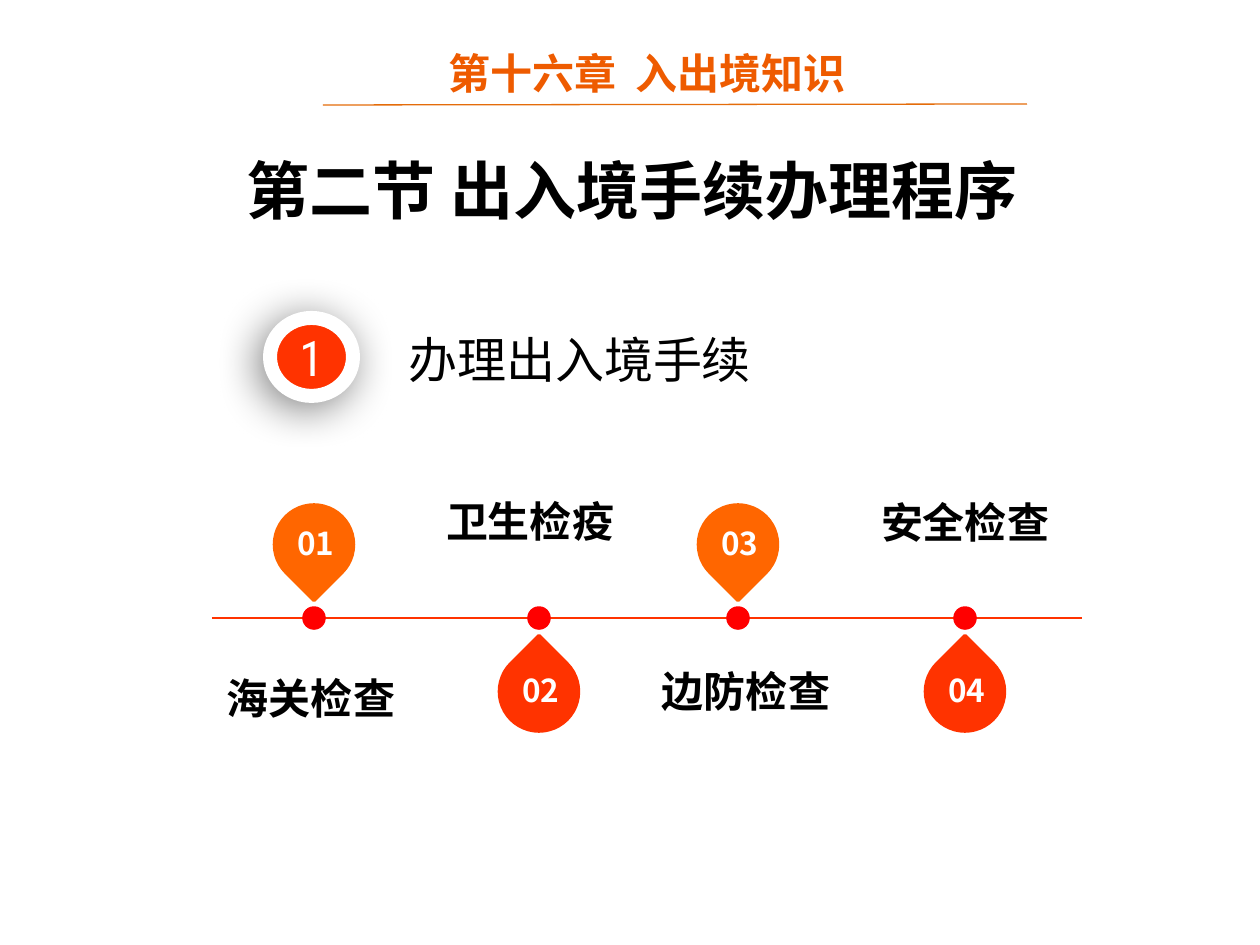
import pptx
import pptx.dml.color
import pptx.enum.shapes
import pptx.enum.text
import pptx.oxml
import pptx.oxml.ns
import pptx.util

RGB = pptx.dml.color.RGBColor
SHAPE = pptx.enum.shapes.MSO_SHAPE
ALIGN = pptx.enum.text.PP_ALIGN
ANCHOR = pptx.enum.text.MSO_ANCHOR

WHITE = RGB(0xFF, 0xFF, 0xFF)
BLACK = RGB(0x00, 0x00, 0x00)
CHAPTER_ORANGE = RGB(0xEE, 0x5B, 0x00)
RULE_ORANGE = RGB(0xE4, 0x6C, 0x0A)
ORANGE = RGB(0xFF, 0x66, 0x00)
VERMILION = RGB(0xFF, 0x33, 0x00)
RED = RGB(0xFF, 0x00, 0x00)

CJK_FONT = "Noto Sans CJK SC"
PX_PER_INCH = 126

# label, pin centre, label centre, label top (px from the timeline box), points down
STEPS = [
    ("海关检查", 102, 99, 177, True),
    ("卫生检疫", 327, 318, 0, False),
    ("边防检查", 526, 534, 170, True),
    ("安全检查", 753, 753, 1, False),
]


def px(length):
    return round(length * 914400 / PX_PER_INCH)


def place(shape, left, top, width, height):
    shape.left, shape.top = px(left), px(top)
    shape.width, shape.height = px(width), px(height)


def write(shape, text, size, color=BLACK, font="Calibri", bold=False,
          align=ALIGN.LEFT, anchor=ANCHOR.TOP):
    frame = shape.text_frame
    frame.word_wrap = True
    frame.auto_size = pptx.enum.text.MSO_AUTO_SIZE.NONE
    frame.vertical_anchor = anchor
    paragraph = frame.paragraphs[0]
    paragraph.alignment = align
    run = paragraph.add_run()
    run.text = text
    run.font.name = font
    run.font.size = pptx.util.Pt(size)
    run.font.bold = bold
    run.font.color.rgb = color
    east_asian = run.font._element.makeelement(
        pptx.oxml.ns.qn("a:ea"), {"typeface": CJK_FONT})
    run.font._element.find(pptx.oxml.ns.qn("a:latin")).addnext(east_asian)


def add_text(shapes, left, top, width, height, text, size, **text_format):
    box = shapes.add_textbox(px(left), px(top), px(width), px(height))
    write(box, text, size, **text_format)


def add_shape(shapes, kind, left, top, width, height, fill, line, line_width):
    shape = shapes.add_shape(kind, px(left), px(top), px(width), px(height))
    shape.shadow.inherit = False
    shape.fill.solid()
    shape.fill.fore_color.rgb = fill
    shape.line.color.rgb = line
    shape.line.width = pptx.util.Pt(line_width)
    return shape


def add_line(shapes, x1, y1, x2, y2, color, width):
    line = shapes.add_connector(pptx.enum.shapes.MSO_CONNECTOR.STRAIGHT,
                                px(x1), px(y1), px(x2), px(y2))
    line.line.color.rgb = color
    line.line.width = pptx.util.Pt(width)
    properties = line._element.spPr
    properties.append(properties.makeelement(pptx.oxml.ns.qn("a:effectLst"), {}))


def cast_shadow(shape):
    """Give the shape a soft black shadow towards the lower left."""
    effects = shape._element.spPr.find(pptx.oxml.ns.qn("a:effectLst"))
    effects.append(pptx.oxml.parse_xml(
        f'<a:outerShdw {pptx.oxml.ns.nsdecls("a")} blurRad="{pptx.util.Pt(25)}" '
        f'dist="{pptx.util.Pt(5)}" dir="{135 * 60000}" algn="tr" rotWithShape="0">'
        '<a:srgbClr val="000000"><a:alpha val="49000"/></a:srgbClr></a:outerShdw>'))


def add_header(slide, left, top):
    add_line(slide.shapes, left + 33, top + 64, left + 737, top + 63,
             RULE_ORANGE, 0.75)
    add_text(slide.shapes, left, top, 714, 63, "第十六章  入出境知识", 24,
             color=CHAPTER_ORANGE, bold=True, align=ALIGN.CENTER)


def add_section_title(slide, left, top, width, height):
    title = slide.shapes.title
    place(title, left, top, width, height)
    write(title, "第二节 出入境手续办理程序", 36, font=CJK_FONT, bold=True,
          align=ALIGN.CENTER)


def add_topic(slide, left, top):
    group = slide.shapes.add_group_shape().shapes
    badge = add_shape(group, SHAPE.OVAL, left, top, 83, 78, VERMILION, WHITE, 8)
    cast_shadow(badge)
    write(badge, "1", 28, color=WHITE, font="Roboto Condensed",
          align=ALIGN.CENTER, anchor=ANCHOR.MIDDLE)
    add_text(group, left + 126, top + 5, 601, 72, "办理出入境手续", 28)


def add_pin(shapes, number, center, axis, points_down):
    size, gap, dot = 79, 34, 20
    if points_down:
        top, color, rotation = axis - gap - size, ORANGE, 135
    else:
        top, color, rotation = axis + gap, VERMILION, 315
    drop = add_shape(shapes, SHAPE.TEAR, center - size / 2, top, size, size,
                     color, color, 2)
    drop.rotation = rotation
    add_shape(shapes, SHAPE.OVAL, center - dot / 2, axis - dot / 2, dot, dot,
              RED, RED, 2)
    add_text(shapes, center - 29, top + 13, 69, 50, f"{number:02d}", 18,
             color=WHITE, font=CJK_FONT, bold=True)


def add_timeline(slide, left, top, width):
    group = slide.shapes.add_group_shape().shapes
    axis = top + 129
    label_width = 234
    add_line(group, left, axis, left + width, axis, VERMILION, 1)
    for number, step in enumerate(STEPS, start=1):
        label, pin_center, label_center, label_top, points_down = step
        add_pin(group, number, left + pin_center, axis, points_down)
        add_text(group, left + label_center - label_width / 2, top + label_top,
                 label_width, 63, label, 24, bold=True, align=ALIGN.CENTER)


def main():
    deck = pptx.Presentation()
    deck.slide_width, deck.slide_height = px(1260), px(945)
    slide = deck.slides.add_slide(deck.slide_layouts.get_by_name("Title Only"))
    add_header(slide, 290, 41)
    add_section_title(slide, 126, 145, 1012, 89)
    add_topic(slide, 270, 318)
    add_timeline(slide, 212, 489, 870)
    deck.save("out.pptx")


if __name__ == "__main__":
    main()
